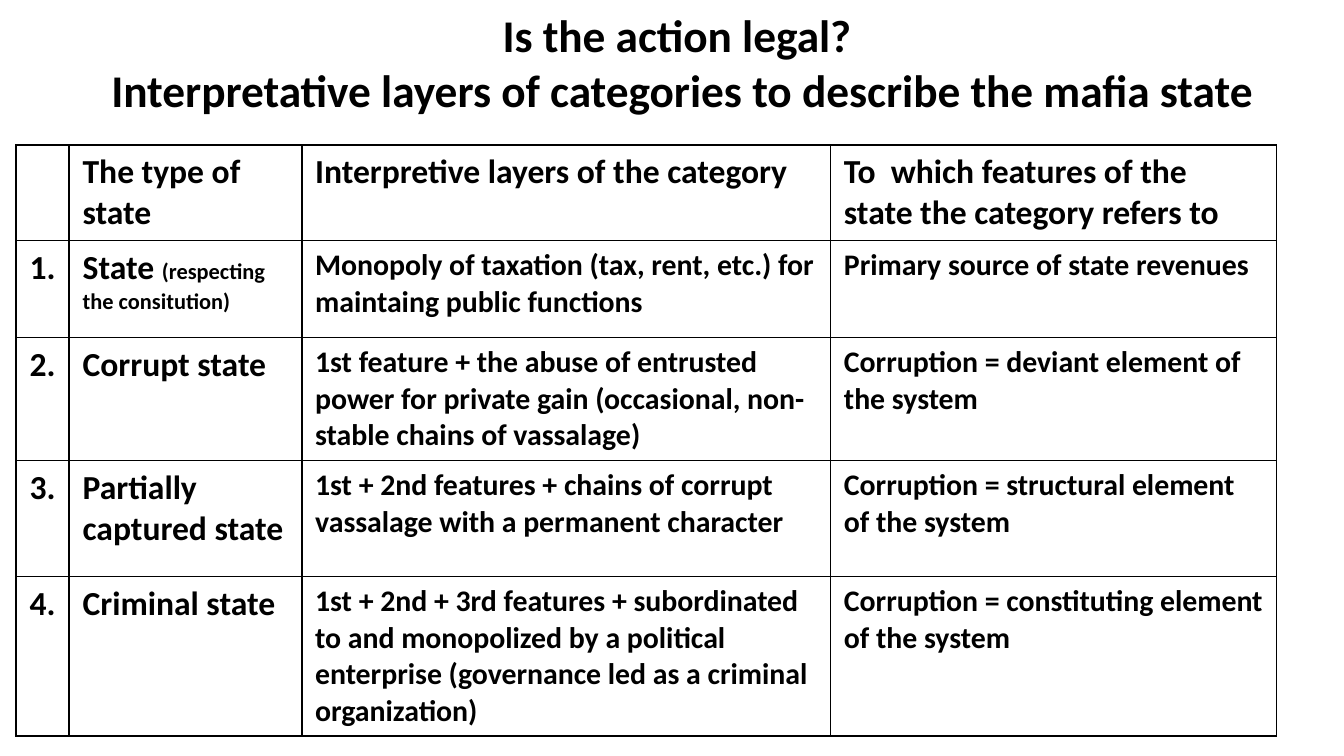
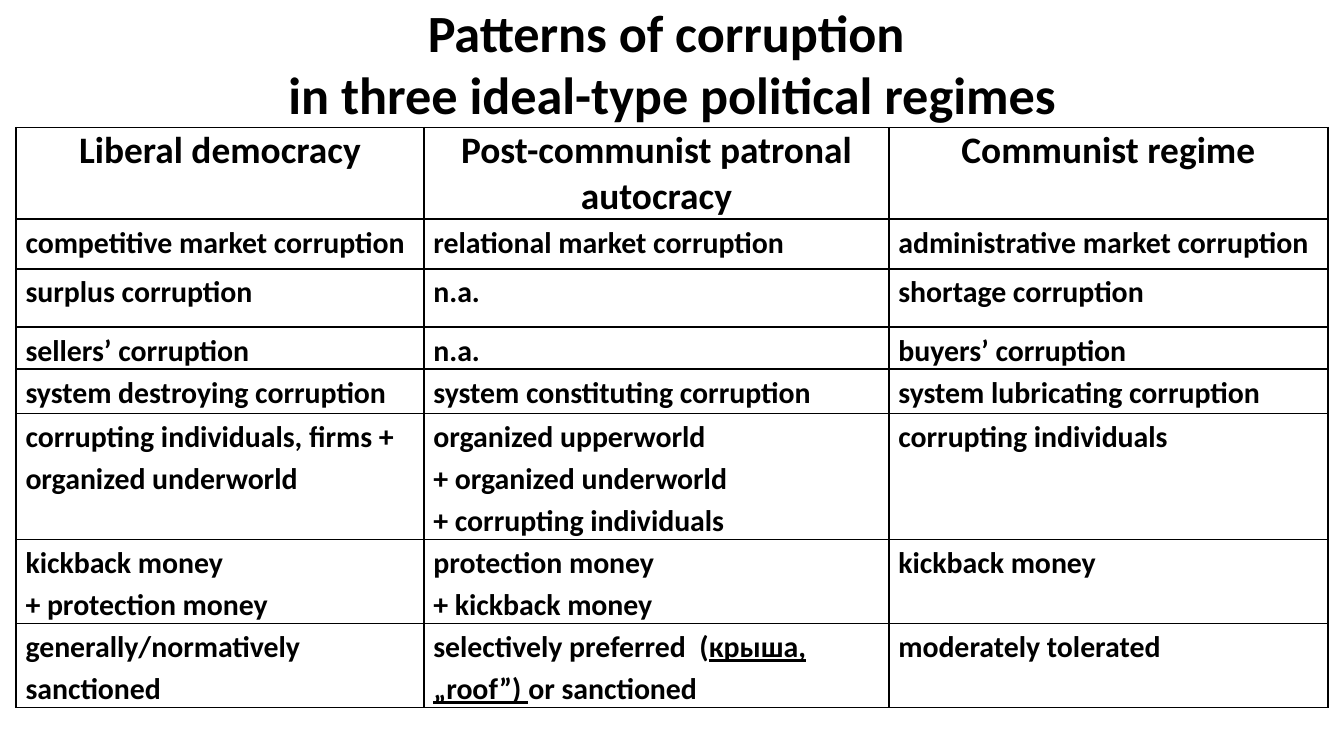
from lxml import etree
from pptx import Presentation
from pptx.dml.color import RGBColor
from pptx.enum import text
from pptx.oxml import ns
from pptx import util as u

PX = 4572  # EMU in one px, 200 px to the inch
FONT = "Calibri"
INK = "000000"
PAPER = "FFFFFF"
LEFT, CENTER, JUSTIFY = (text.PP_ALIGN.LEFT, text.PP_ALIGN.CENTER,
                         text.PP_ALIGN.JUSTIFY)


def rgb(hex_colour):
    return RGBColor.from_string(hex_colour)


def add_run(p, words, size, underline=None):
    r = p.add_run()
    r.text = words
    r.font.name = FONT
    r.font.size = u.Pt(size)
    r.font.bold = True
    r.font.underline = underline
    r.font.color.rgb = rgb(INK)


# A cell is a string, one paragraph a line, or a list of (words, changes) runs.
layers_rows = [
    ["", "The type of state", "Interpretive layers of the category",
     "To  which features of the state the category refers to"],
    ["1.", [("State ", {}), ("(respecting the consitution)", {"size": 12})],
     "Monopoly of taxation (tax, rent, etc.) for maintaing public functions",
     "Primary source of state revenues"],
    ["2.", "Corrupt state",
     "1st feature + the abuse of entrusted power for private gain "
     "(occasional, non-stable chains of vassalage)",
     "Corruption = deviant element of the system"],
    ["3.", "Partially captured state",
     "1st + 2nd features + chains of corrupt vassalage with a permanent character",
     "Corruption = structural element of the system"],
    ["4.", "Criminal state",
     "1st + 2nd + 3rd features + subordinated to and monopolized by a political "
     "enterprise (governance led as a criminal organization)",
     "Corruption = constituting element of the system"],
]

patterns_rows = [
    ["Liberal democracy", "Post-communist patronal autocracy", "Communist regime"],
    ["competitive market corruption", "relational market corruption",
     "administrative market corruption"],
    ["surplus corruption", "n.a.", "shortage corruption"],
    ["sellers’ corruption", "n.a.", "buyers’ corruption"],
    ["system destroying corruption", "system constituting corruption",
     "system lubricating corruption"],
    ["corrupting individuals, firms + organized underworld",
     "organized upperworld\n+ organized underworld\n+ corrupting individuals",
     "corrupting individuals"],
    ["kickback money\n+ protection money", "protection money\n+ kickback money",
     "kickback money"],
    ["generally/normatively sanctioned",
     [("selectively preferred  (", {}), ("крыша, „roof”) ", {"underline": True}),
      ("or sanctioned", {})],
     "moderately tolerated"],
]

pages = [
    dict(title=["Is the action legal? ",
                "Interpretative layers of categories to describe the mafia state"],
         title_box=(100, 0, 1830, 184), title_size=24.3,
         table_box=(24, 216, 1876, 870), rows=layers_rows,
         widths=[79, 346, 787, 664], heights=[114, 144, 174, 173, 192],
         head_size=18, head_align=[LEFT, LEFT, JUSTIFY, LEFT],
         body_sizes=[18, 18, 16, 16], body_align=[CENTER, LEFT, LEFT, LEFT],
         margins=(20, 10), spacing=None),
    dict(title=["Patterns of corruption ", "in three ideal-type political regimes"],
         title_box=(100, 16, 1800, 154), title_size=28,
         table_box=(24, 190, 1952, 852), rows=patterns_rows,
         widths=[607, 692, 653], heights=[126, 74, 87, 62, 66, 174, 118, 124],
         head_size=20, head_align=[CENTER] * 3,
         body_sizes=[16] * 3, body_align=[LEFT] * 3,
         margins=(14, 0), spacing=1.15),
]

prs = Presentation()
prs.slide_width = 2000 * PX
prs.slide_height = 1125 * PX
title_only = prs.slide_layouts[5]

for page in pages:
    s = prs.slides.add_slide(title_only)
    s.background.fill.solid()
    s.background.fill.fore_color.rgb = rgb(PAPER)

    title = s.shapes.title
    title.left, title.top, title.width, title.height = (
        v * PX for v in page["title_box"])
    tf = title.text_frame
    tf.word_wrap = True
    tf.auto_size = text.MSO_AUTO_SIZE.NONE
    tf.vertical_anchor = text.MSO_ANCHOR.MIDDLE
    p = tf.paragraphs[0]
    p.alignment = CENTER
    for i, line in enumerate(page["title"]):
        if i:
            p.add_line_break()
        add_run(p, line, page["title_size"])

    rows = page["rows"]
    frame = s.shapes.add_table(len(rows), len(rows[0]),
                               *(v * PX for v in page["table_box"]))
    table = frame.table
    table.first_row = False
    table.horz_banding = False
    for column, width in zip(table.columns, page["widths"]):
        column.width = width * PX
    for row, height in zip(table.rows, page["heights"]):
        row.height = height * PX
    frame.height = page["table_box"][3] * PX

    side, edge = (v * PX for v in page["margins"])
    for y, row in enumerate(rows):
        for x, content in enumerate(row):
            cell = table.cell(y, x)
            cell.margin_left = cell.margin_right = side
            cell.margin_top = cell.margin_bottom = edge
            tcPr = cell._tc.get_or_add_tcPr()
            for tag in ("a:lnL", "a:lnR", "a:lnT", "a:lnB"):
                ln = etree.SubElement(tcPr, ns.qn(tag), w=str(u.Pt(1)))
                fill = etree.SubElement(ln, ns.qn("a:solidFill"))
                etree.SubElement(fill, ns.qn("a:srgbClr"), val=INK)
            cell.fill.background()

            if not content:
                continue
            size = page["body_sizes"][x] if y else page["head_size"]
            align = page["body_align" if y else "head_align"][x]
            if isinstance(content, str):
                paragraphs = [[(line, {})] for line in content.split("\n")]
            else:
                paragraphs = [content]
            tf = cell.text_frame
            for i, runs in enumerate(paragraphs):
                p = tf.add_paragraph() if i else tf.paragraphs[0]
                p.alignment = align
                if y and page["spacing"]:
                    p.line_spacing = page["spacing"]
                for words, changes in runs:
                    add_run(p, words, **{"size": size, **changes})

prs.save("out.pptx")
